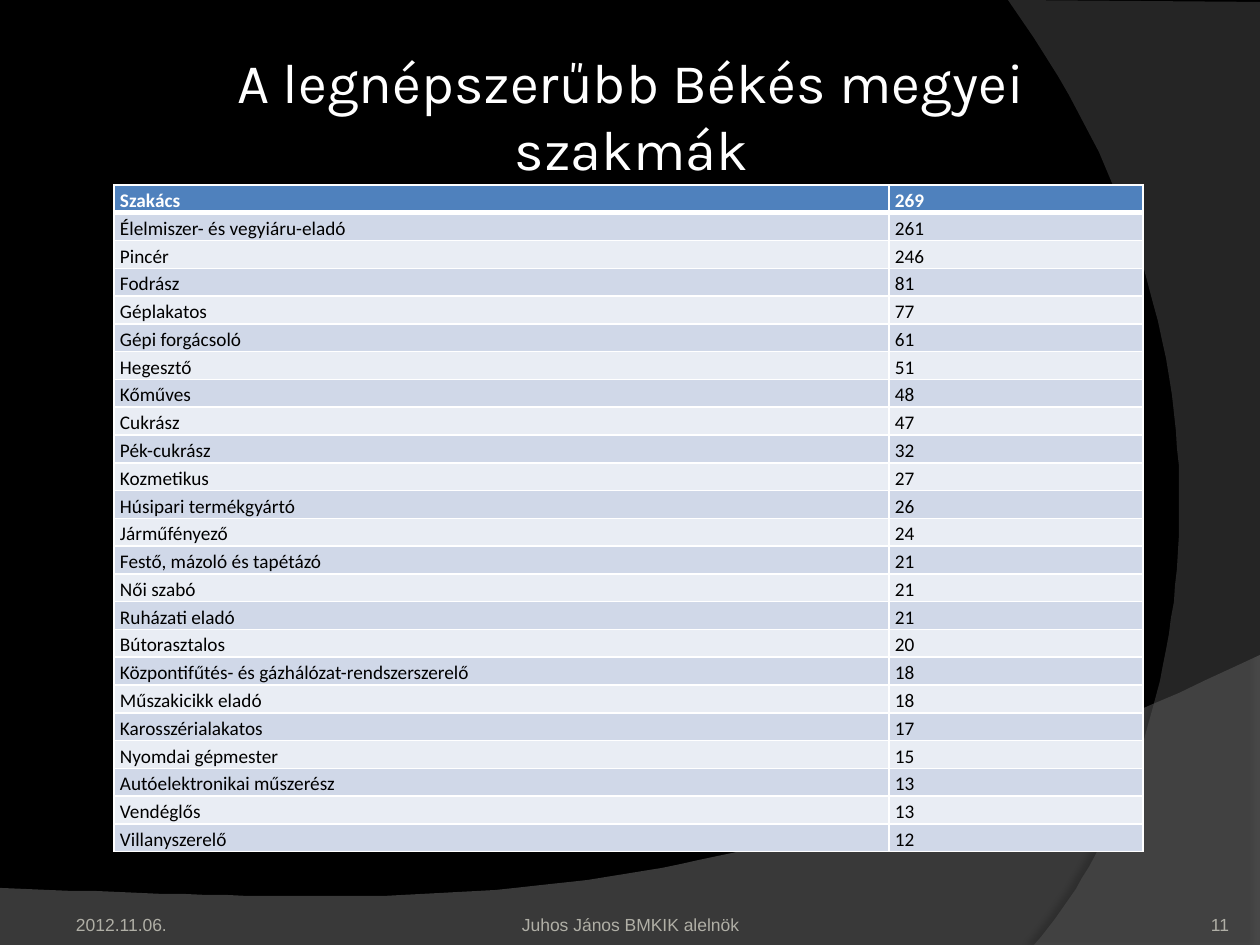
import dataclasses

import pptx
import pptx.dml.color
import pptx.enum.text
import pptx.oxml
import pptx.oxml.ns
import pptx.util

SCALE = 914400 // 126  # EMU per px
WIDTH, HEIGHT = 1260, 945
ANCHOR = pptx.enum.text.MSO_ANCHOR
ALIGN = pptx.enum.text.PP_ALIGN


@dataclasses.dataclass(frozen=True)
class Theme:
    background: str = "000000"
    bottom_wave: str = "7F7F7F"
    side_wave: str = "5E5E5E"
    light: str = "FFFFFF"
    dark: str = "000000"
    footer: str = "B0AFA6"
    header_fill: str = "4F81BD"
    band_fills: tuple = ("E9EDF4", "D0D8E8")
    title_font: str = "Karla"
    table_font: str = "Calibri"
    footer_font: str = "Arial"
    title_size: int = 32
    table_size: int = 11
    footer_size: int = 10


THEME = Theme()

TRADES = [
    ("Szakács", 269),
    ("Élelmiszer- és vegyiáru-eladó", 261),
    ("Pincér", 246),
    ("Fodrász", 81),
    ("Géplakatos", 77),
    ("Gépi forgácsoló", 61),
    ("Hegesztő", 51),
    ("Kőműves", 48),
    ("Cukrász", 47),
    ("Pék-cukrász", 32),
    ("Kozmetikus", 27),
    ("Húsipari termékgyártó", 26),
    ("Járműfényező", 24),
    ("Festő, mázoló és tapétázó", 21),
    ("Női szabó", 21),
    ("Ruházati eladó", 21),
    ("Bútorasztalos", 20),
    ("Központifűtés- és gázhálózat-rendszerszerelő", 18),
    ("Műszakicikk eladó", 18),
    ("Karosszérialakatos", 17),
    ("Nyomdai gépmester", 15),
    ("Autóelektronikai műszerész", 13),
    ("Vendéglős", 13),
    ("Villanyszerelő", 12),
]


def px(length):
    return pptx.util.Emu(length * SCALE)


def rgb(color):
    return pptx.dml.color.RGBColor.from_string(color)


def parse_drawing(xml):
    namespace = pptx.oxml.ns.nsdecls("a")
    return pptx.oxml.parse_xml(xml.replace(">", f" {namespace}>", 1))


def set_font(font, name, size, color, bold=False):
    font.name = name
    font.size = pptx.util.Pt(size)
    font.color.rgb = rgb(color)
    font.bold = bold


def set_frame(frame, anchor, left=0, top=0, right=0, bottom=0):
    frame.word_wrap = True
    frame.auto_size = pptx.enum.text.MSO_AUTO_SIZE.NONE
    frame.vertical_anchor = anchor
    frame.margin_left, frame.margin_top = px(left), px(top)
    frame.margin_right, frame.margin_bottom = px(right), px(bottom)


def place(shape, left, top, width, height):
    shape.left, shape.top = px(left), px(top)
    shape.width, shape.height = px(width), px(height)


def curve(start, control_1, control_2, end, steps=60):
    """Points along a cubic Bézier curve, start left out."""
    points = []
    for step in range(1, steps + 1):
        t = step / steps
        weights = ((1 - t) ** 3, 3 * t * (1 - t) ** 2, 3 * t * t * (1 - t), t ** 3)
        corners = (start, control_1, control_2, end)
        points.append(tuple(
            sum(weight * corner[axis] for weight, corner in zip(weights, corners))
            for axis in (0, 1)))
    return points


def add_wave(slide, points, color, opacity, shadow_opacity, distance, direction):
    builder = slide.shapes.build_freeform(*points[0], scale=SCALE)
    builder.add_line_segments(points[1:], close=True)
    shape = builder.convert_to_shape()
    shape.fill.solid()
    shape.fill.fore_color.rgb = rgb(color)
    shape.line.fill.background()
    color_element = shape.fill._xPr.find(".//" + pptx.oxml.ns.qn("a:srgbClr"))
    color_element.append(parse_drawing(f'<a:alpha val="{opacity * 1000}"></a:alpha>'))
    shape._element.spPr.append(parse_drawing(
        '<a:effectLst>'
        f'<a:outerShdw blurRad="{pptx.util.Pt(4)}" dist="{pptx.util.Pt(distance)}" '
        f'dir="{direction * 60000}" algn="ctr" rotWithShape="0">'
        f'<a:srgbClr val="{THEME.dark}"><a:alpha val="{shadow_opacity * 1000}"/>'
        '</a:srgbClr></a:outerShdw></a:effectLst>'))


def add_title(slide, text):
    title = slide.shapes.title
    place(title, 117, 36, 1029, 158)
    set_frame(title.text_frame, ANCHOR.MIDDLE, 6, 6, 6, 6)
    title.text_frame.text = text
    paragraph = title.text_frame.paragraphs[0]
    paragraph.alignment = ALIGN.CENTER
    set_font(paragraph.font, THEME.title_font, THEME.title_size, THEME.light)


def add_footer(slide, text, left, width, alignment, side_margin=0):
    box = slide.shapes.add_textbox(px(left), px(885), px(width), px(50))
    set_frame(box.text_frame, ANCHOR.BOTTOM, left=side_margin, right=side_margin)
    paragraph = box.text_frame.paragraphs[0]
    paragraph.text = text
    paragraph.alignment = alignment
    set_font(paragraph.font, THEME.footer_font, THEME.footer_size, THEME.footer)


def set_borders(cell, top=1, bottom=1):
    properties = cell._tc.get_or_add_tcPr()
    for side, points in (("L", 1), ("R", 1), ("T", top), ("B", bottom)):
        properties.append(parse_drawing(
            f'<a:ln{side} w="{pptx.util.Pt(points)}"><a:solidFill>'
            f'<a:srgbClr val="{THEME.light}"/></a:solidFill></a:ln{side}>'))


def fill_cell(cell, text, row):
    header = row == 0
    set_borders(cell, top=3 if row == 1 else 1, bottom=3 if header else 1)
    cell.fill.solid()
    cell.fill.fore_color.rgb = rgb(THEME.header_fill if header else THEME.band_fills[row % 2])
    cell.vertical_anchor = ANCHOR.BOTTOM
    cell.margin_left = cell.margin_right = px(6)
    cell.margin_top = cell.margin_bottom = 0
    paragraph = cell.text_frame.paragraphs[0]
    paragraph.text = str(text)
    paragraph.line_spacing = 1.15
    set_font(paragraph.font, THEME.table_font, THEME.table_size,
             THEME.light if header else THEME.dark, bold=header)


def add_trades_table(slide):
    column_widths = (775, 254)
    frame = slide.shapes.add_table(len(TRADES), len(column_widths), px(114), px(185),
                                   px(sum(column_widths)), px(667))
    for column, width in zip(frame.table.columns, column_widths):
        column.width = px(width)
    for row, values in enumerate(TRADES):
        for column, value in enumerate(values):
            fill_cell(frame.table.cell(row, column), value, row)


def main():
    presentation = pptx.Presentation()
    presentation.slide_width, presentation.slide_height = px(WIDTH), px(HEIGHT)
    slide = presentation.slides.add_slide(presentation.slide_layouts[5])
    slide.background.fill.solid()
    slide.background.fill.fore_color.rgb = rgb(THEME.background)

    # Background waves, behind the title
    bottom_wave = [(0, 888), (0, 946), (WIDTH, 946), (WIDTH, 655)]
    bottom_wave += curve(bottom_wave[-1], (704, 919), (493, 906), bottom_wave[0])
    add_wave(slide, bottom_wave, THEME.bottom_wave, 45, 35, 3.5, 270)
    side_wave = [(WIDTH, 2), (WIDTH, HEIGHT), (1034, HEIGHT)]
    side_wave += curve(side_wave[-1], (1178, 780), (1283, 378), (1008, 0))
    add_wave(slide, side_wave, THEME.side_wave, 40, 45, 4, 180)
    slide.shapes._spTree.append(slide.shapes.title._element)

    # Content
    add_title(slide, "A legnépszerűbb Békés megyei szakmák")
    add_footer(slide, "2012.11.06.", 63, 294, ALIGN.LEFT, side_margin=13)
    add_footer(slide, "Juhos János BMKIK alelnök", 431, 399, ALIGN.CENTER)
    add_footer(slide, "11", 1124, 105, ALIGN.RIGHT)
    add_trades_table(slide)

    presentation.save("out.pptx")


if __name__ == "__main__":
    main()
